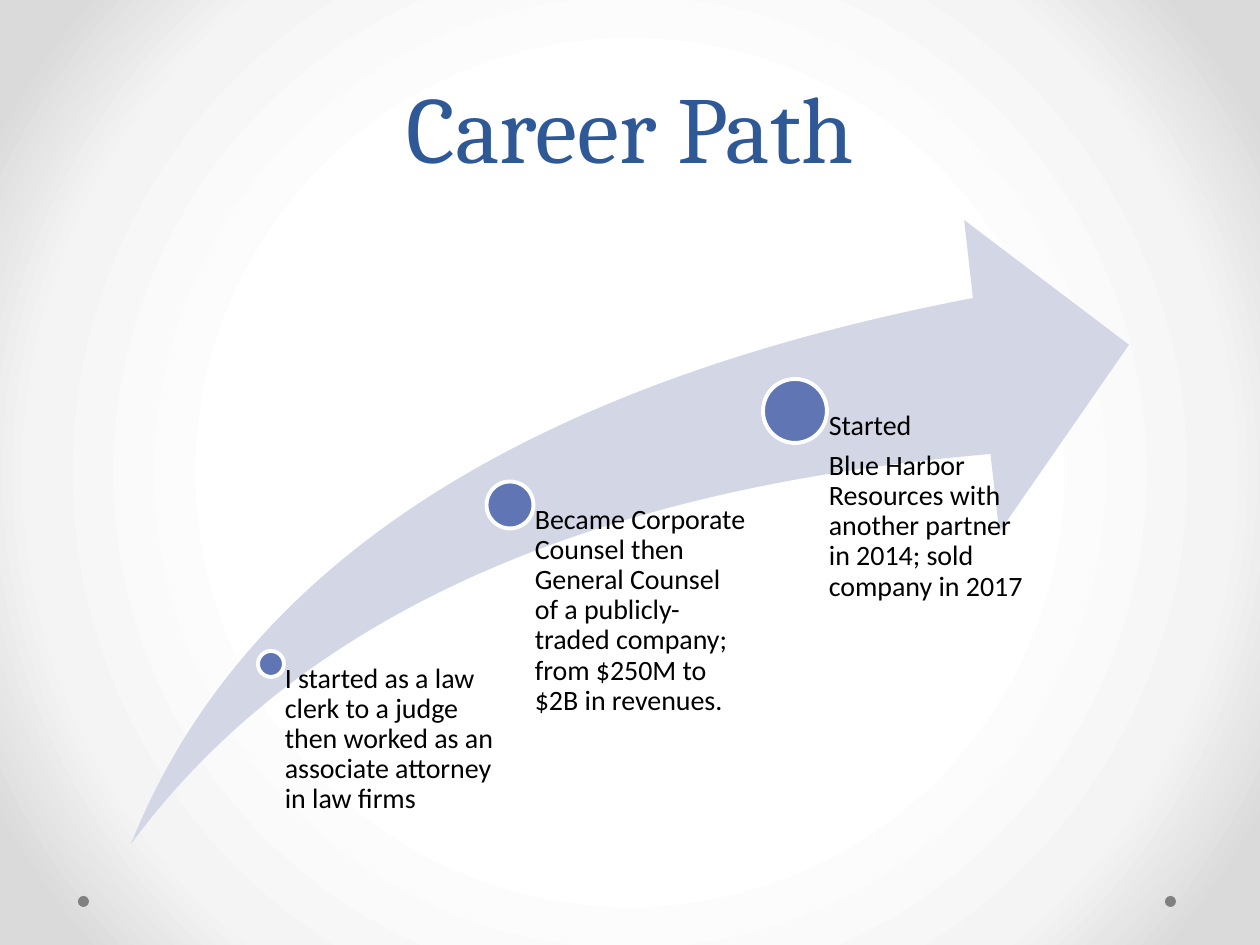
from dataclasses import dataclass

from lxml.etree import SubElement
from pptx import Presentation
from pptx.dml.color import RGBColor
from pptx.enum.shapes import MSO_SHAPE as Shape
from pptx.enum.text import MSO_ANCHOR as Anchor, PP_ALIGN as Align
from pptx.oxml.ns import qn
from pptx.util import Pt

EMU_PER_PX = 914400 / 126
TITLE_ONLY = 5


@dataclass(frozen=True)
class Theme:
    title: str = "2F5897"
    text: str = "000000"
    swoosh: str = "D2D6E5"
    dot: str = "6076B4"
    outline: str = "FFFFFF"
    corner: str = "808080"
    glow: tuple = ((50, "FFFFFF"), (76, "F4F4F4"), (92, "DADADA"))
    title_font: str = "Cambria"
    body_font: str = "Calibri"
    title_size: int = 54
    title_leading: int = 58
    body_size: int = 16


@dataclass(frozen=True)
class Milestone:
    x: int
    y: int
    diameter: int
    width: int
    lines: tuple[str, ...]


THEME = Theme()
ARROW_BOTTOM = 844
MILESTONES = (
    Milestone(271, 664, 26, 233, (
        "I started as a law clerk to a judge then worked as an associate "
        "attorney in law firms",)),
    Milestone(510, 505, 47, 239, (
        "Became Corporate Counsel then General Counsel of a "
        "publicly-traded company; from $250M to $2B in revenues.",)),
    Milestone(795, 411, 64, 239, (
        "Started",
        "Blue Harbor Resources with another partner in 2014; "
        "sold company in 2017")),
)


def px(n: float) -> int:
    return round(n * EMU_PER_PX)


def rgb(value: str) -> RGBColor:
    return RGBColor.from_string(value)


def add_background(s) -> None:
    s.background.fill.gradient()
    grad = s.element.find(".//" + qn("a:gradFill"))
    for child in list(grad):
        grad.remove(child)
    stops = SubElement(grad, qn("a:gsLst"))
    for pos, color in THEME.glow:
        stop = SubElement(stops, qn("a:gs"), pos=str(pos * 1000))
        SubElement(stop, qn("a:srgbClr"), val=color)
    path = SubElement(grad, qn("a:path"), path="circle")
    SubElement(path, qn("a:fillToRect"), l="50000", t="50000", r="50000", b="50000")


def add_filled(shapes, kind: Shape, x: float, y: float, w: float, h: float,
               fill: str, outline: str | None = None):
    sp = shapes.add_shape(kind, px(x), px(y), px(w), px(h))
    sp.shadow.inherit = False
    sp.fill.solid()
    sp.fill.fore_color.rgb = rgb(fill)
    if outline:
        sp.line.color.rgb = rgb(outline)
        sp.line.width = Pt(2.25)
    else:
        sp.line.fill.background()
    return sp


def add_title(s, text: str) -> None:
    sp = s.shapes.title
    sp.left, sp.top, sp.width, sp.height = px(63), px(21), px(1134), px(168)
    tf = sp.text_frame
    tf.text = text
    tf.vertical_anchor = Anchor.BOTTOM
    p = tf.paragraphs[0]
    p.alignment = Align.CENTER
    p.line_spacing = Pt(THEME.title_leading)
    p.font.name = THEME.title_font
    p.font.size = Pt(THEME.title_size)
    p.font.color.rgb = rgb(THEME.title)


def add_milestone(shapes, m: Milestone) -> None:
    d = m.diameter
    add_filled(shapes, Shape.OVAL, m.x - d / 2, m.y - d / 2, d, d,
               THEME.dot, THEME.outline)
    sp = shapes.add_textbox(px(m.x), px(m.y), px(m.width), px(ARROW_BOTTOM - m.y))
    tf = sp.text_frame
    tf.word_wrap = True
    tf.margin_left = px(d * 0.53)
    tf.margin_top = tf.margin_right = tf.margin_bottom = 0
    tf.text = "\n".join(m.lines)
    for p in tf.paragraphs:
        p.line_spacing = 0.9
        p.space_after = Pt(THEME.body_size * 0.35)
        p.font.name = THEME.body_font
        p.font.size = Pt(THEME.body_size)
        p.font.color.rgb = rgb(THEME.text)


def main() -> None:
    prs = Presentation()
    prs.slide_width, prs.slide_height = px(1260), px(945)
    s = prs.slides.add_slide(prs.slide_layouts[TITLE_ONLY])
    add_background(s)
    for x in (1165, 78):
        add_filled(s.shapes, Shape.OVAL, x, 896, 11, 11, THEME.corner)
    add_title(s, "Career Path")
    diagram = s.shapes.add_group_shape().shapes
    swoosh = add_filled(diagram, Shape.SWOOSH_ARROW, 131, 220, 998,
                        ARROW_BOTTOM - 220, THEME.swoosh)
    swoosh.adjustments[0] = swoosh.adjustments[1] = 0.25
    for m in MILESTONES:
        add_milestone(diagram, m)
    prs.save("out.pptx")


if __name__ == "__main__":
    main()
